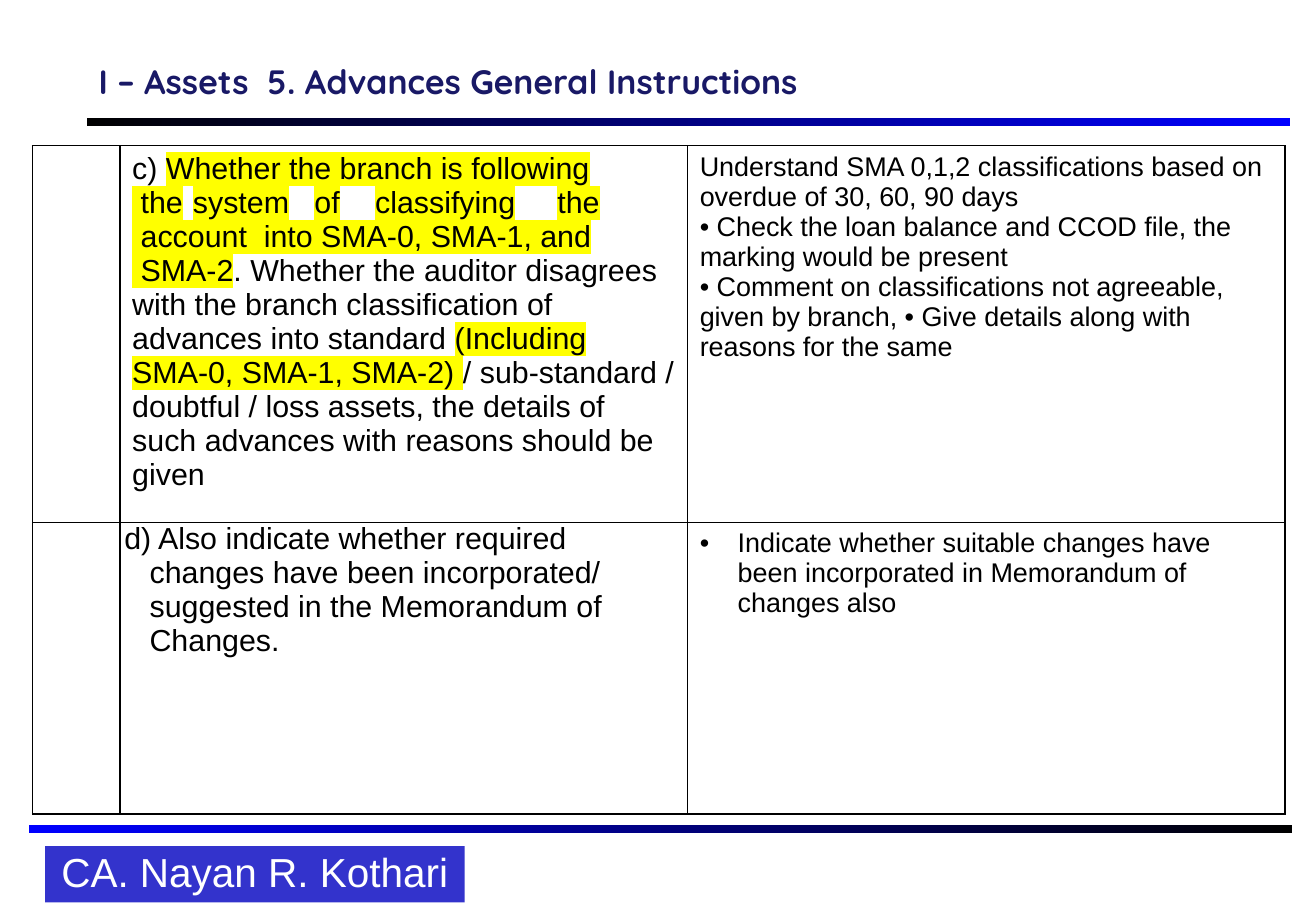
from lxml import etree
from pptx import Presentation
from pptx.dml.color import RGBColor
from pptx.enum import shapes, text
from pptx.oxml import ns
from pptx.util import Pt

COLORS = {"black": "000000", "blue": "0000FF", "badge": "3333CC",
          "white": "FFFFFF", "title": "191966", "marker": "FFFF00"}


def rgb(name):
    return RGBColor.from_string(COLORS[name])


def sub(parent, tag, **attributes):
    return etree.SubElement(parent, ns.qn(tag), **attributes)


def write(paragraph, content, size=18, font="Arial", color="black",
          bold=False, marked=False):
    """Add one formatted run; marked text gets a highlighter background."""
    run = paragraph.add_run()
    run.text = content
    run.font.size, run.font.bold = Pt(size), bold
    run.font.color.rgb = rgb(color)
    if marked:
        highlight = sub(run.font._element, "a:highlight")
        sub(highlight, "a:srgbClr", val=COLORS["marker"])
    run.font.name = font


def layout(paragraph, left=0, hanging=0, bullet=None, tabs=()):
    """Set the indents, bullet and tab stops of a paragraph, in points."""
    props = paragraph._p.get_or_add_pPr()
    props.set("marL", str(Pt(left)))
    props.set("indent", str(Pt(-hanging)))
    if bullet:
        sub(props, "a:buFont", typeface="Arial")
        sub(props, "a:buChar", char=bullet)
    if tabs:
        stops = sub(props, "a:tabLst")
        for stop in tabs:
            sub(stops, "a:tab", pos=str(Pt(stop)), algn="l")


def fill_paragraphs(frame, paragraphs, size):
    """Each paragraph is a list of (text, marked) runs and a layout dict."""
    for i, (runs, arrangement) in enumerate(paragraphs):
        paragraph = frame.add_paragraph() if i else frame.paragraphs[0]
        layout(paragraph, **arrangement)
        for content, marked in runs:
            write(paragraph, content, size=size, marked=marked)


class Deck:
    def __init__(self, width, height):
        self.prs = Presentation()
        self.prs.slide_width, self.prs.slide_height = Pt(width), Pt(height)
        self.slide = self.prs.slides.add_slide(self.prs.slide_layouts[6])

    def rect(self, *box):
        rect = self.slide.shapes.add_shape(
            shapes.MSO_SHAPE.RECTANGLE, *map(Pt, box))
        rect.shadow.inherit = False
        rect.line.fill.background()
        return rect

    def gradient_bar(self, box, start, end):
        fill = self.rect(*box).fill
        fill.gradient()
        fill.gradient_angle = 0
        for stop, color in zip(fill.gradient_stops, (start, end)):
            stop.color.rgb = rgb(color)

    def rule(self, left, right, y, color, width):
        rule = self.slide.shapes.add_connector(
            shapes.MSO_CONNECTOR.STRAIGHT, Pt(left), Pt(y), Pt(right), Pt(y))
        rule.line.color.rgb = rgb(color)
        rule.line.width = Pt(width)
        sub(rule._element.spPr, "a:effectLst")

    def badge(self, box, content):
        badge = self.rect(*box)
        badge.fill.solid()
        badge.fill.fore_color.rgb = rgb("badge")
        frame = badge.text_frame
        frame.vertical_anchor = text.MSO_ANCHOR.MIDDLE
        paragraph = frame.paragraphs[0]
        paragraph.alignment = text.PP_ALIGN.CENTER
        paragraph.line_spacing = 0.9
        write(paragraph, content, size=24, color="white")

    def title(self, box, content):
        frame = self.slide.shapes.add_textbox(*map(Pt, box)).text_frame
        frame.word_wrap = True
        frame.vertical_anchor = text.MSO_ANCHOR.BOTTOM
        write(frame.paragraphs[0], content, size=20, font="Quicksand",
              color="title", bold=True)

    def table(self, left, top, widths, heights):
        table = self.slide.shapes.add_table(
            len(heights), len(widths), Pt(left), Pt(top),
            Pt(sum(widths)), Pt(sum(heights))).table
        table.first_row = table.horz_banding = False
        for column, width in zip(table.columns, widths):
            column.width = Pt(width)
        for row, height in zip(table.rows, heights):
            row.height = Pt(height)
        for cell in table.iter_cells():
            props = cell._tc.get_or_add_tcPr()
            for side in "LRTB":
                border = sub(props, f"a:ln{side}", w=str(Pt(1)))
                fill = sub(border, "a:solidFill")
                sub(fill, "a:srgbClr", val=COLORS["black"])
            cell.fill.background()
        return table


CLASSIFICATION = [
    ([("c) ", False), ("Whether the branch is following", True)], {}),
    ([(" the\tsystem\tof\tclassifying\tthe", True)],
     {"tabs": (50.4, 127.4, 161.8, 254.8)}),
    ([(" account  into SMA-0, SMA-1, and", True)], {}),
    ([(" SMA-2", True),
      (". Whether the auditor disagrees with the branch classification of "
       "advances into standard ", False),
      ("(Including SMA-0, SMA-1, SMA-2) ", True),
      ("/ sub-standard / doubtful / loss assets, the details of such advances "
       "with reasons should be given", False)], {}),
]
CLASSIFICATION_CHECKS = [([(line, False)], {}) for line in (
    "Understand SMA 0,1,2 classifications based on overdue of 30, 60, 90 days",
    "• Check the loan balance and CCOD file, the marking would be present",
    "• Comment on classifications not agreeable, given by branch, "
    "• Give details along with reasons for the same")]
MEMORANDUM = [([(line, False)], {"left": left}) for line, left in (
    ("d) Also indicate whether required", 2.5),
    ("changes have been incorporated/", 17.5),
    ("suggested in the Memorandum of", 17.5),
    ("Changes.", 17.5))]
MEMORANDUM_CHECKS = [
    ([("Indicate whether suitable changes have been incorporated in "
       "Memorandum of changes also", False)],
     {"left": 22.5, "hanging": 22.5, "bullet": "•"})]


def main():
    deck = Deck(780, 540)
    deck.gradient_bar((51.3, 70, 713.5, 5), "black", "blue")
    deck.rule(17.3, 764.6, 491.8, "blue", 4.5)
    deck.gradient_bar((17.3, 489, 748.8, 5), "blue", "black")
    deck.badge((26.8, 501.6, 248.6, 33.4), "CA. Nayan R. Kothari")
    deck.title((51.3, 0, 713.5, 63.5),
               "I – Assets  5. Advances General Instructions")

    table = deck.table(19.4, 86.4, (51.8, 336.4, 354.2), (214.3, 173))
    instructions = ((CLASSIFICATION, CLASSIFICATION_CHECKS),
                    (MEMORANDUM, MEMORANDUM_CHECKS))
    for row, (instruction, checks) in enumerate(instructions):
        fill_paragraphs(table.cell(row, 1).text_frame, instruction, 18)
        fill_paragraphs(table.cell(row, 2).text_frame, checks, 16)
    memorandum = table.cell(1, 1)
    memorandum.margin_left = memorandum.margin_right = 0
    memorandum.margin_top = memorandum.margin_bottom = 0
    deck.prs.save("out.pptx")


if __name__ == "__main__":
    main()
